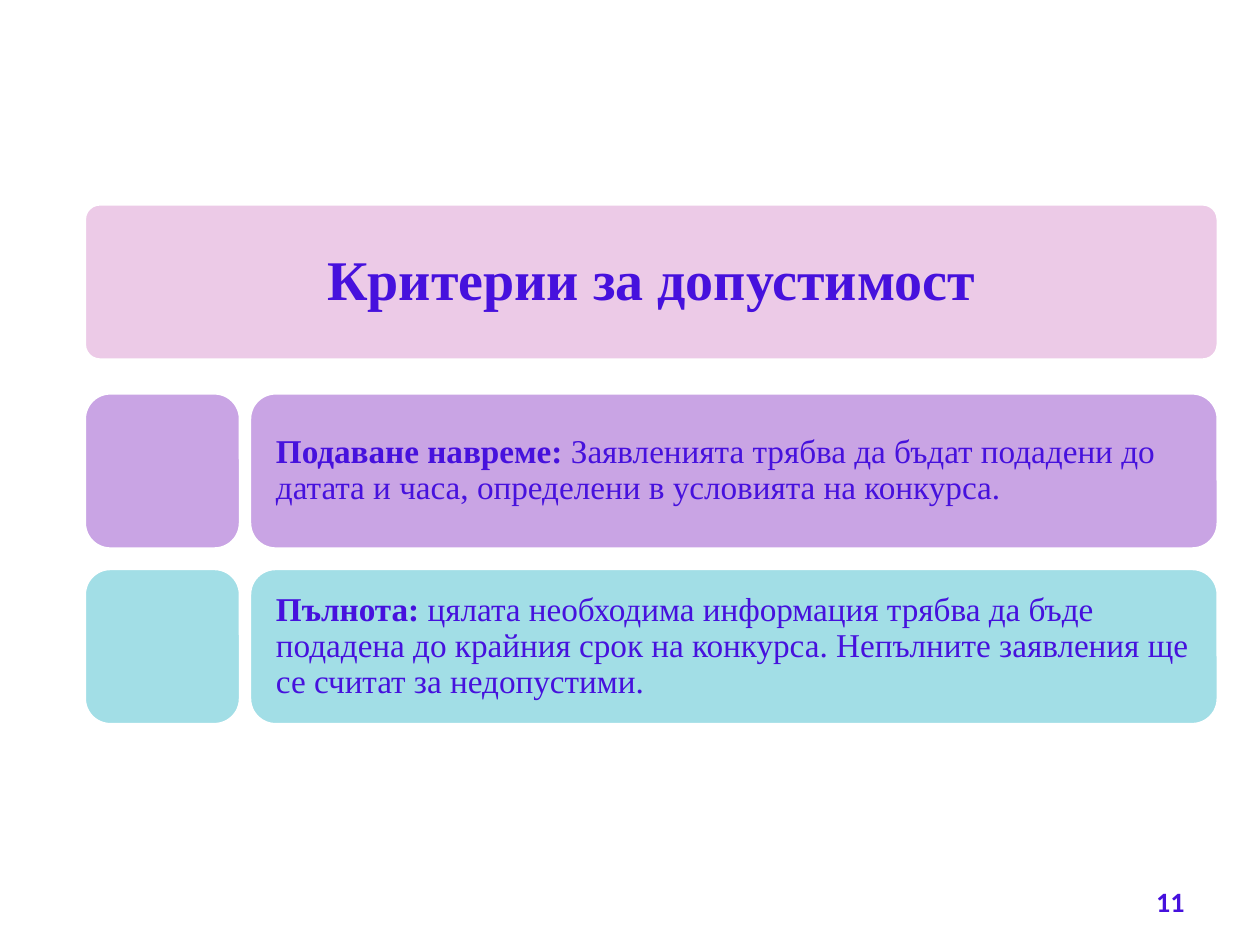
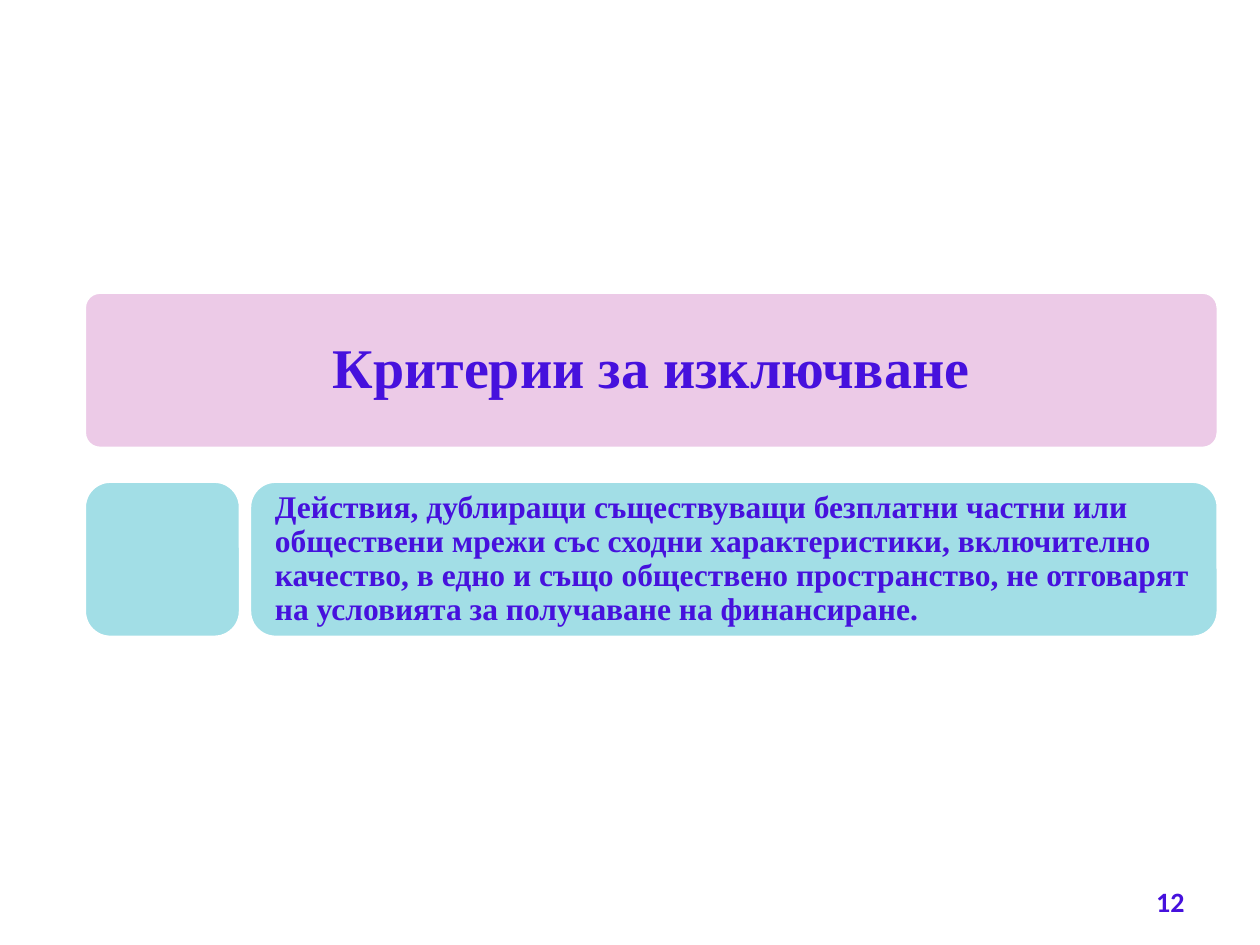
from pptx import Presentation
from pptx.dml.color import RGBColor
from pptx.enum.shapes import MSO_SHAPE as Shape
from pptx.enum.text import MSO_ANCHOR as Anchor, MSO_AUTO_SIZE as AutoSize, PP_ALIGN as Align
from pptx.util import Cm, Pt

# Shared colours and fonts
INK, PINK, LILAC, AQUA, WHITE = "4611DD", "ECCAE7", "C9A4E4", "A2DEE6", "FFFFFF"
SERIF, SANS = "Times New Roman", "Calibri"

# Shared grid, in centimetres
LEFT, WIDTH, BAND = 1.7, 22.86, 3.15
CARD_LEFT = 5.03
CARD_WIDTH = LEFT + WIDTH - CARD_LEFT
FIRST_ROW, ROW_STEP = 3.81, 3.54
TITLE_INSET = 0.1


def color(hex_string):
    return RGBColor.from_string(hex_string)


class Deck:
    def __init__(self):
        self.presentation = Presentation()
        self.presentation.slide_width = Cm(25.4)
        self.presentation.slide_height = Cm(19.05)
        self.slide = None

    def add_slide(self):
        self.slide = self.presentation.slides.add_slide(self.presentation.slide_layouts[5])

    def set_text(self, shape, parts, size, font=SERIF, align=Align.LEFT, margins=(0.25, 0.13), spacing=None):
        """Fill a shape with one paragraph made of (text, bold) parts."""
        frame = shape.text_frame
        frame.word_wrap = True
        frame.auto_size = AutoSize.NONE
        frame.vertical_anchor = Anchor.MIDDLE
        frame.margin_left = frame.margin_right = Cm(margins[0])
        frame.margin_top = frame.margin_bottom = Cm(margins[1])
        paragraph = frame.paragraphs[0]
        paragraph.alignment = align
        paragraph.line_spacing = spacing
        for text, bold in parts:
            run = paragraph.add_run()
            run.text = text
            run.font.size = Pt(size)
            run.font.name = font
            run.font.bold = bold
            run.font.color.rgb = color(INK)

    def panel(self, left, top, width, fill, corner=0.167):
        shape = self.slide.shapes.add_shape(
            Shape.ROUNDED_RECTANGLE, Cm(left), Cm(top), Cm(width), Cm(BAND))
        shape.adjustments[0] = corner
        shape.shadow.inherit = False
        shape.fill.solid()
        shape.fill.fore_color.rgb = color(fill)
        shape.line.color.rgb = color(WHITE)
        shape.line.width = Pt(2)
        return shape

    def title(self, text, top):
        title = self.slide.shapes.title
        title.left, title.top = Cm(LEFT + TITLE_INSET), Cm(top + TITLE_INSET)
        title.width, title.height = Cm(WIDTH - 2 * TITLE_INSET), Cm(BAND - 2 * TITLE_INSET)
        self.set_text(title, [(text, True)], 32, align=Align.CENTER, margins=(0.18, 0.1), spacing=0.9)
        # The band lies behind the title
        band = self.panel(LEFT, top, WIDTH, PINK, corner=0.1)
        title.element.addprevious(band.element)

    def criterion(self, top, fill, parts, size):
        self.panel(LEFT, top, BAND, fill)
        card = self.panel(CARD_LEFT, top, CARD_WIDTH, fill)
        inset = size * 0.02
        self.set_text(card, parts, size, margins=(inset, inset), spacing=0.9)

    def page_number(self, number):
        box = self.slide.shapes.add_textbox(Cm(18.21), Cm(17.65), Cm(5.92), Cm(1.02))
        self.set_text(box, [(str(number), True)], 16, font=SANS, align=Align.RIGHT)


# Content: title, top of the band, text size, criteria as (fill, parts)
SLIDES = [
    ("Критерии за допустимост", 4.11, 19, [
        (LILAC, [("Подаване навреме: ", True),
                 ("Заявленията трябва да бъдат подадени до датата и часа, "
                  "определени в условията на конкурса.", False)]),
        (AQUA, [("Пълнота:", True),
                (" цялата необходима информация трябва да бъде подадена до крайния срок "
                 "на конкурса. Непълните заявления ще се считат за недопустими.", False)]),
    ]),
    ("Критерии за изключване", 5.89, 18, [
        (AQUA, [("Действия, дублиращи съществуващи безплатни частни или обществени мрежи "
                 "със сходни характеристики, включително качество, в едно и също обществено "
                 "пространство, не отговарят на условията за получаване на финансиране.", True)]),
    ]),
]


def main():
    deck = Deck()
    for number, (title, top, size, criteria) in enumerate(SLIDES, start=11):
        deck.add_slide()
        deck.title(title, top)
        for row, (fill, parts) in enumerate(criteria):
            deck.criterion(top + FIRST_ROW + row * ROW_STEP, fill, parts, size)
        deck.page_number(number)
    deck.presentation.save("out.pptx")


if __name__ == "__main__":
    main()
